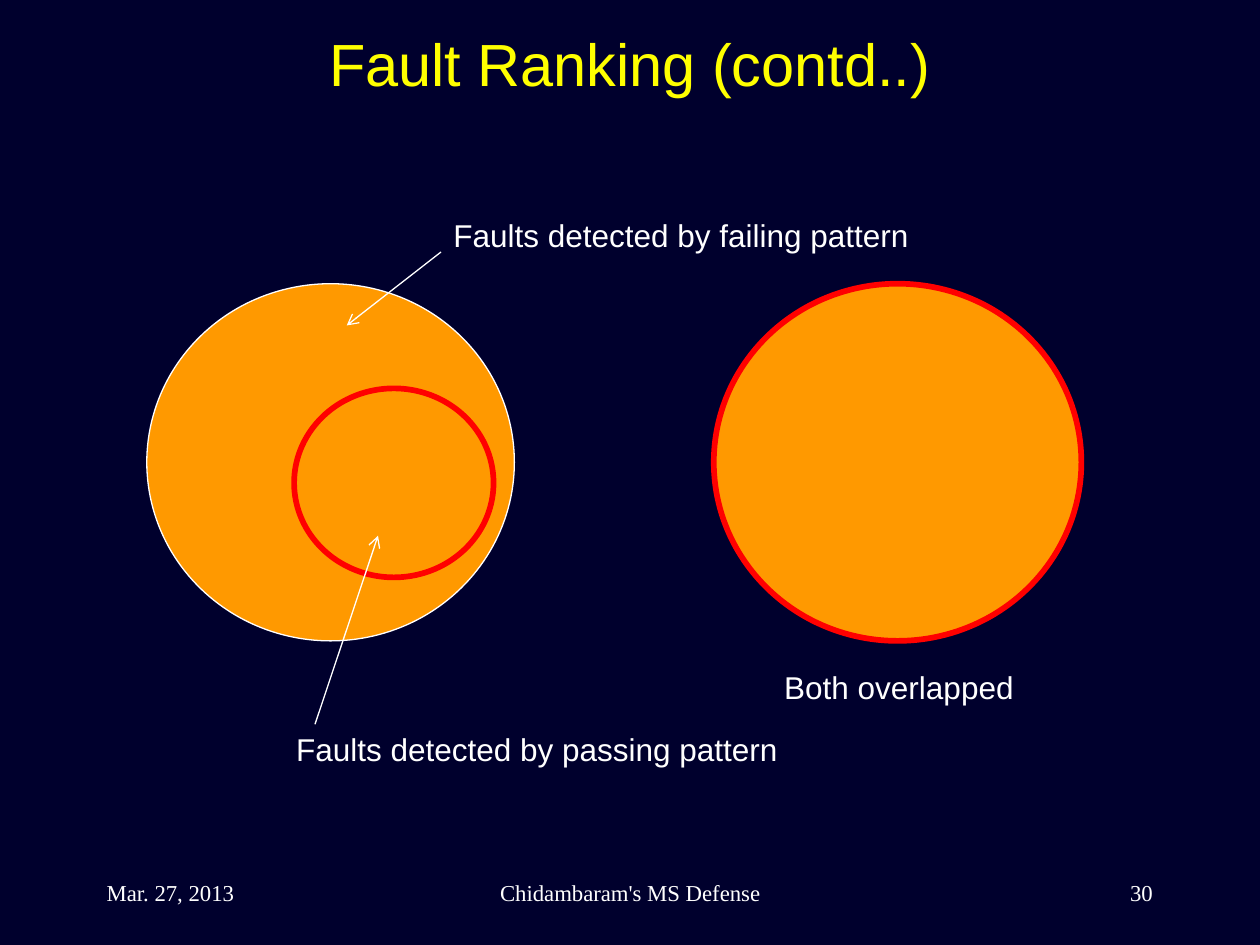
"""Build the fault ranking slide with its two pattern diagrams."""
from lxml import etree
from pptx import Presentation
from pptx.dml.color import RGBColor
from pptx.enum.shapes import MSO_CONNECTOR, MSO_SHAPE
from pptx.enum.text import MSO_ANCHOR, PP_ALIGN
from pptx.oxml.ns import qn
from pptx.util import Cm, Pt

LEFT, CENTER, RIGHT = PP_ALIGN.LEFT, PP_ALIGN.CENTER, PP_ALIGN.RIGHT
TOP, MIDDLE = MSO_ANCHOR.TOP, MSO_ANCHOR.MIDDLE
OVAL, STRAIGHT = MSO_SHAPE.OVAL, MSO_CONNECTOR.STRAIGHT

NAVY, ORANGE, RED, YELLOW, WHITE = "00002D", "FF9900", "FF0000", "FFFF00", "FFFFFF"

TITLE = ("Fault Ranking (contd..)", (1.27, 0.42, 22.86, 3.18))
LABELS = [
    ("Faults detected by passing pattern", (5.72, 14.6, 10.31, 1.02)),
    ("Faults detected by failing pattern", (8.89, 4.23, 9.78, 1.02)),
    ("Both overlapped", (15.56, 13.34, 5.18, 1.02)),
]
FOOTERS = [
    ("Mar. 27, 2013", 1.9, 5.29, LEFT),
    ("Chidambaram's MS Defense", 8.68, 8.04, CENTER),
    ("30", 18.2, 5.29, RIGHT),
]
FOOTER_TOP, FOOTER_HEIGHT = 17.36, 1.27
FAULT_SETS = [
    ((2.96, 5.72, 7.41, 7.2), WHITE, 0.75),
    ((5.93, 7.83, 4.02, 3.81), RED, 3.25),
    ((14.39, 5.72, 7.41, 7.2), RED, 3.25),
]
POINTERS = [
    (8.89, 5.08, 6.99, 6.56),
    (6.35, 14.6, 7.62, 10.8),
]


def rgb(color):
    return RGBColor.from_string(color)


def lengths(values):
    return [Cm(value) for value in values]


def add_text(slide, wording, box, size, color=WHITE, font="Arial", align=LEFT, anchor=TOP):
    frame = slide.shapes.add_textbox(*lengths(box)).text_frame
    frame.word_wrap = True
    frame.vertical_anchor = anchor
    paragraph = frame.paragraphs[0]
    paragraph.alignment = align
    run = paragraph.add_run()
    run.text = wording
    run.font.name = font
    run.font.size = Pt(size)
    run.font.color.rgb = rgb(color)


def add_fault_set(slide, box, outline, width):
    fault_set = slide.shapes.add_shape(OVAL, *lengths(box))
    fault_set.shadow.inherit = False
    fault_set.fill.solid()
    fault_set.fill.fore_color.rgb = rgb(ORANGE)
    fault_set.line.color.rgb = rgb(outline)
    fault_set.line.width = Pt(width)


def add_pointer(slide, ends):
    pointer = slide.shapes.add_connector(STRAIGHT, *lengths(ends))
    pointer.line.color.rgb = rgb(WHITE)
    pointer.line.width = Pt(0.75)
    properties = pointer._element.spPr
    etree.SubElement(properties.find(qn("a:ln")), qn("a:tailEnd"), type="arrow")
    etree.SubElement(properties, qn("a:effectLst"))


def main():
    deck = Presentation()
    deck.slide_width, deck.slide_height = Cm(25.4), Cm(19.05)
    slide = deck.slides.add_slide(deck.slide_layouts[6])
    slide.background.fill.solid()
    slide.background.fill.fore_color.rgb = rgb(NAVY)

    for wording, left, width, align in FOOTERS:
        box = (left, FOOTER_TOP, width, FOOTER_HEIGHT)
        add_text(slide, wording, box, 13, font="Times New Roman", align=align, anchor=MIDDLE)
    add_text(slide, *TITLE, 34, color=YELLOW, align=CENTER)
    for fault_set in FAULT_SETS:
        add_fault_set(slide, *fault_set)
    for wording, box in LABELS:
        add_text(slide, wording, box, 18)
    for ends in POINTERS:
        add_pointer(slide, ends)
    deck.save("out.pptx")


if __name__ == "__main__":
    main()
